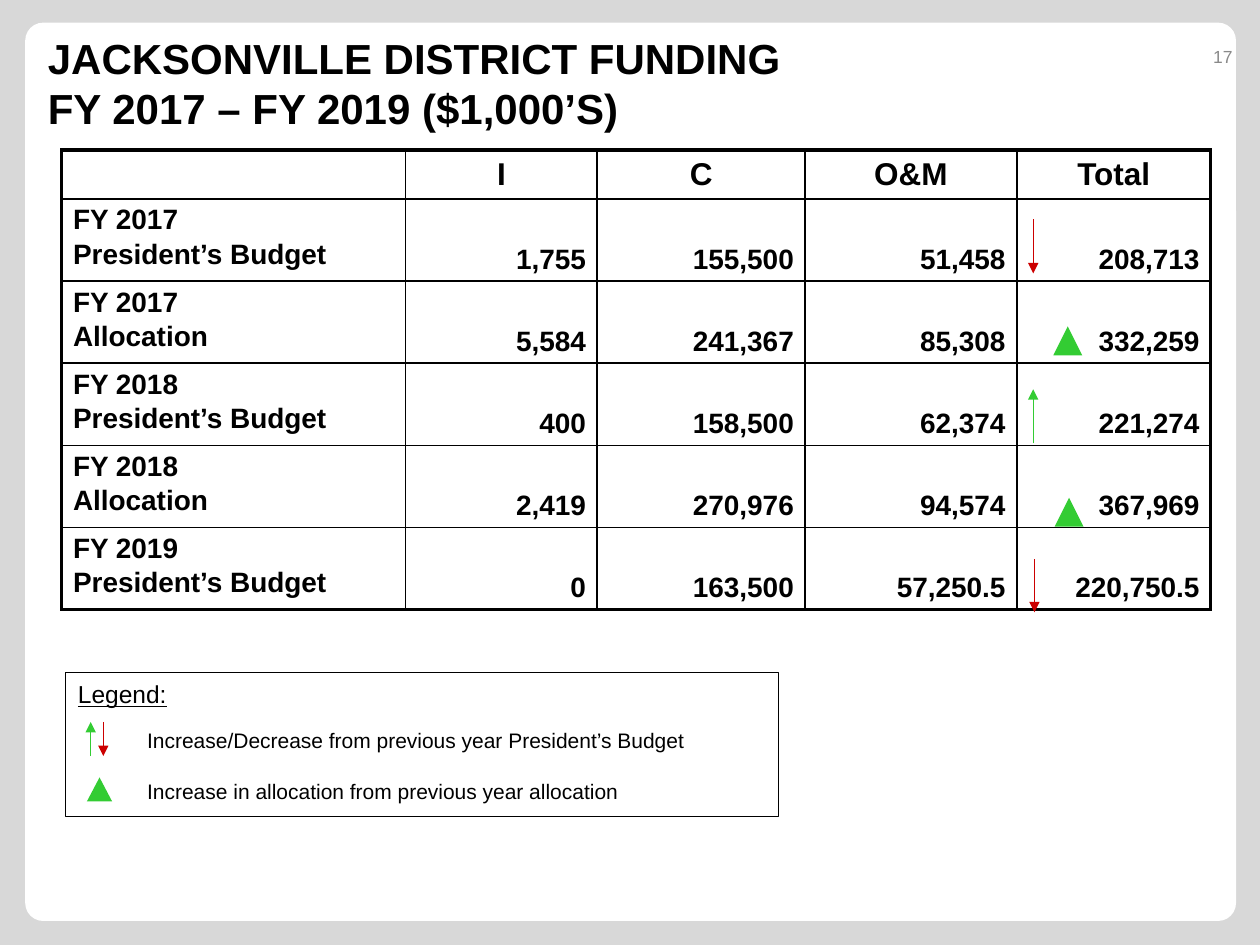
from dataclasses import dataclass
from typing import NamedTuple

from lxml.etree import SubElement
from pptx import Presentation
from pptx.dml.color import RGBColor
from pptx.enum.dml import MSO_LINE
from pptx.enum.shapes import MSO_CONNECTOR, MSO_SHAPE
from pptx.enum.text import MSO_ANCHOR, MSO_AUTO_SIZE, PP_ALIGN
from pptx.oxml import parse_xml
from pptx.oxml.ns import nsdecls, qn
from pptx.util import Inches, Pt


@dataclass(frozen=True)
class Theme:
    font: str = "Arial"
    ink: str = "000000"
    paper: str = "FFFFFF"
    back: str = "D8D8D8"
    grey: str = "898989"
    rise: str = "33CC33"
    fall: str = "CC0000"
    title: int = 24
    head: int = 18
    body: int = 16
    label: int = 14
    note: int = 12
    page: int = 10
    thin: float = 0.75
    rule: float = 1
    edge: float = 2.25


class Box(NamedTuple):
    col: float
    row: float
    wide: float
    high: float


class Arrow(NamedTuple):
    col: float
    top: float
    base: float
    up: bool


T = Theme()
WIDE, HIGH = Inches(10), Inches(7.5)
COLS, ROWS = 100, 75

CARD = Box(2, 1.8, 96.1, 71.3)
TITLE = Box(2.8, 2.5, 93.3, 8.1)
PAGE = Box(90.8, 2.5, 8, 4)
GRID = Box(4.9, 11.9, 91.2, 37.8)
LEGEND = Box(5.2, 53.4, 56.6, 11.4)

SPANS = [27.3, 15.2, 16.5, 16.8, 15.4]
HEADS = ["", "I", "C", "O&M", "Total"]
PLAN, GRANT = "President’s Budget", "Allocation"
FUNDS = [
    ("FY 2017", PLAN, "1,755", "155,500", "51,458", "208,713"),
    ("FY 2017", GRANT, "5,584", "241,367", "85,308", "332,259"),
    ("FY 2018", PLAN, "400", "158,500", "62,374", "221,274"),
    ("FY 2018", GRANT, "2,419", "270,976", "94,574", "367,969"),
    ("FY 2019", PLAN, "0", "163,500", "57,250.5", "220,750.5"),
]
ARROWS = [
    Arrow(7.2, 57.3, 60, True),
    Arrow(8.2, 57.3, 60, False),
    Arrow(82, 17.4, 21.7, False),
    Arrow(82, 30.9, 35.2, True),
    Arrow(82.1, 44.4, 48.6, False),
]
GAINS = [
    Box(83.6, 25.9, 2.3, 2.3),
    Box(83.7, 39.5, 2.3, 2.3),
    Box(6.9, 61.7, 2, 1.9),
]


def across(cols: float) -> int:
    return round(WIDE * cols / COLS)


def down(rows: float) -> int:
    return round(HIGH * rows / ROWS)


def place(box: Box) -> tuple:
    return across(box.col), down(box.row), across(box.wide), down(box.high)


def tint(code: str) -> RGBColor:
    return RGBColor.from_string(code)


def write(para, text: str, size: int, bold=False, color=T.ink, under=False):
    run = para.add_run()
    run.text = text
    font = run.font
    font.name, font.size, font.bold = T.font, Pt(size), bold
    font.underline = under
    font.color.rgb = tint(color)


def shape(slide, kind, box: Box, fill=None, line=None):
    item = slide.shapes.add_shape(kind, *place(box))
    item.shadow.inherit = False
    if fill:
        item.fill.solid()
        item.fill.fore_color.rgb = tint(fill)
    else:
        item.fill.background()
    if line:
        item.line.color.rgb = tint(line)
        item.line.width = Pt(T.thin)
    else:
        item.line.fill.background()
    return item


def arrow(slide, mark: Arrow) -> None:
    start, end = (mark.base, mark.top) if mark.up else (mark.top, mark.base)
    x = across(mark.col)
    item = slide.shapes.add_connector(
        MSO_CONNECTOR.STRAIGHT, x, down(start), x, down(end))
    item.line.color.rgb = tint(T.rise if mark.up else T.fall)
    item.line.width = Pt(T.thin)
    item.line.dash_style = MSO_LINE.SOLID
    SubElement(item.line._get_or_add_ln(), qn("a:tailEnd"), type="triangle")
    SubElement(item.element.spPr, qn("a:effectLst"))


def border(cell, widths: dict) -> None:
    props = cell._tc.get_or_add_tcPr()
    for spot, (side, width) in enumerate(widths.items()):
        props.insert(spot, parse_xml(
            f'<a:ln{side} {nsdecls("a")} w="{Pt(width)}"><a:solidFill>'
            f'<a:srgbClr val="{T.ink}"/></a:solidFill></a:ln{side}>'))


def fill_cell(cell, lines: list, size: int, align, anchor) -> None:
    cell.fill.background()
    cell.margin_left = cell.margin_right = across(0.9)
    cell.margin_top = cell.margin_bottom = down(0.45)
    cell.vertical_anchor = anchor
    frame = cell.text_frame
    for spot, text in enumerate(lines):
        para = frame.add_paragraph() if spot else frame.paragraphs[0]
        para.alignment = align
        if spot:
            para.space_before = Pt(2)
        if text:
            write(para, text, size, True)


def table(slide) -> None:
    last, end = len(FUNDS), len(SPANS) - 1
    grid = slide.shapes.add_table(last + 1, end + 1, *place(GRID)).table
    grid.first_row = grid.horz_banding = False
    for col, span in zip(grid.columns, SPANS):
        col.width = across(span)
    for r, row in enumerate(grid.rows):
        row.height = down(6.4 if r else 3.7)
        for c in range(end + 1):
            cell = grid.cell(r, c)
            if r == 0:
                fill_cell(cell, [HEADS[c]], T.head, PP_ALIGN.CENTER, MSO_ANCHOR.MIDDLE)
            elif c == 0:
                fill_cell(cell, FUNDS[r - 1][:2], T.body, PP_ALIGN.LEFT, MSO_ANCHOR.TOP)
            else:
                fill_cell(cell, [FUNDS[r - 1][c + 1]], T.body, PP_ALIGN.RIGHT,
                          MSO_ANCHOR.BOTTOM)
            sides = {"L": c == 0, "R": c == end, "T": r == 0, "B": r == last}
            border(cell, {s: T.edge if out else T.rule for s, out in sides.items()})


def header(slide) -> None:
    title = slide.shapes.title
    title.left, title.top, title.width, title.height = place(TITLE)
    frame = title.text_frame
    frame.word_wrap, frame.auto_size = True, MSO_AUTO_SIZE.NONE
    frame.vertical_anchor = MSO_ANCHOR.MIDDLE
    para = frame.paragraphs[0]
    para.alignment = PP_ALIGN.LEFT
    write(para, "JACKSONVILLE DISTRICT FUNDING", T.title, True)
    para.add_line_break()
    write(para, "FY 2017 – FY 2019 ($1,000’S)", T.title, True)
    card = shape(slide, MSO_SHAPE.ROUNDED_RECTANGLE, CARD, T.paper)
    card.adjustments[0] = 0.02
    title.element.addprevious(card.element)
    frame = slide.shapes.add_textbox(*place(PAGE)).text_frame
    frame.word_wrap = True
    frame.vertical_anchor = MSO_ANCHOR.MIDDLE
    frame.paragraphs[0].alignment = PP_ALIGN.RIGHT
    write(frame.paragraphs[0], "17", T.page, color=T.grey)


def legend(slide) -> None:
    frame = shape(slide, MSO_SHAPE.RECTANGLE, LEGEND, line=T.ink).text_frame
    frame.word_wrap = True
    frame.vertical_anchor = MSO_ANCHOR.TOP
    para = frame.paragraphs[0]
    para.alignment = PP_ALIGN.LEFT
    write(para, "Legend:", T.label, under=True)
    notes = [("Increase/Decrease from previous year President’s Budget", 11),
             ("Increase in allocation from previous year allocation", 14.5)]
    for text, gap in notes:
        para = frame.add_paragraph()
        para.alignment = PP_ALIGN.LEFT
        para.space_before = Pt(gap)
        para._p.get_or_add_pPr().set("marL", str(across(5.5)))
        write(para, text, T.note)


def main() -> None:
    deck = Presentation()
    deck.slide_width, deck.slide_height = WIDE, HIGH
    slide = deck.slides.add_slide(deck.slide_layouts[5])
    slide.background.fill.solid()
    slide.background.fill.fore_color.rgb = tint(T.back)
    header(slide)
    table(slide)
    legend(slide)
    for mark in ARROWS:
        arrow(slide, mark)
    for box in GAINS:
        shape(slide, MSO_SHAPE.ISOSCELES_TRIANGLE, box, T.rise)
    deck.save("out.pptx")


if __name__ == "__main__":
    main()
